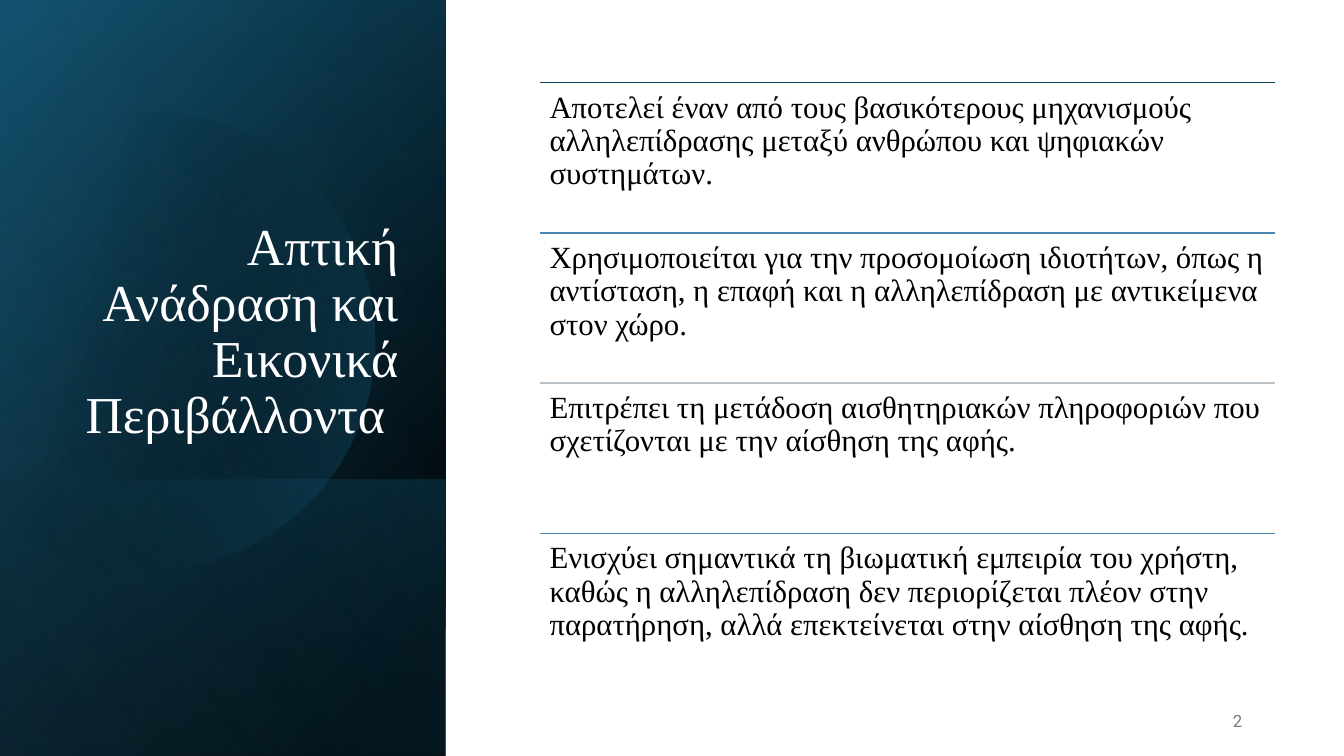
from dataclasses import dataclass

from lxml import etree
from pptx import Presentation
from pptx import util as u
from pptx.dml.color import RGBColor
from pptx.enum import shapes, text
from pptx.oxml.ns import qn

PX = 9144  # 100 px to the inch


@dataclass(frozen=True)
class Theme:
    serif: str = "Times New Roman"
    sans: str = "Roboto"
    black: str = "000000"
    white: str = "FFFFFF"
    deep: str = "104862"
    teal: str = "156082"
    sky: str = "46B1E1"
    grey: str = "797979"
    rules: tuple = ("104760", "4987AF", "BAC1C7", "4987AF")
    head: int = 37
    body: int = 22
    foot: int = 12


T = Theme()
TITLE = "Απτική Ανάδραση και Εικονικά Περιβάλλοντα "
POINTS = (
    "Αποτελεί έναν από τους βασικότερους μηχανισμούς αλληλεπίδρασης "
    "μεταξύ ανθρώπου και ψηφιακών συστημάτων.",
    "Χρησιμοποιείται για την προσομοίωση ιδιοτήτων, όπως η αντίσταση, "
    "η επαφή και η αλληλεπίδραση με αντικείμενα στον χώρο.",
    "Επιτρέπει τη μετάδοση αισθητηριακών πληροφοριών που σχετίζονται "
    "με την αίσθηση της αφής.",
    "Ενισχύει σημαντικά τη βιωματική εμπειρία του χρήστη, καθώς η "
    "αλληλεπίδραση δεν περιορίζεται πλέον στην παρατήρηση, αλλά "
    "επεκτείνεται στην αίσθηση της αφής.",
)


def emu(*sizes):
    return [round(s * PX) for s in sizes]


def shade(shape, angle, *stops):
    """Fill with a clockwise gradient of (position, colour, opacity) stops."""
    shape.shadow.inherit = False
    shape.line.fill.background()
    shape.fill.gradient()
    shape.fill.gradient_angle = 360 - angle
    for stop, (pos, color, _) in zip(shape.fill.gradient_stops, stops):
        stop.position = pos / 100
        stop.color.rgb = RGBColor.from_string(color)
    tints = shape.element.spPr.iter(qn("a:srgbClr"))
    for tint, (_, _, alpha) in zip(list(tints), stops):
        if alpha < 100:
            etree.SubElement(tint, qn("a:alpha"), val=str(alpha * 1000))


def layer(slide, box, angle, *stops):
    """Cover the box with a mirrored rectangle on its side."""
    x, y, w, h = box
    shift = (w - h) / 2
    rect = slide.shapes.add_shape(
        shapes.MSO_SHAPE.RECTANGLE, *emu(x + shift, y - shift, h, w))
    rect.rotation = 90
    rect.element.spPr.find(qn("a:xfrm")).set("flipH", "1")
    shade(rect, angle, *stops)


def curve(a, b, c, d, steps=16):
    """Points along a cubic curve, after its start."""
    for i in range(1, steps + 1):
        t = i / steps
        s = 1 - t
        yield tuple(s**3 * p + 3 * s * s * t * q + 3 * s * t * t * r + t**3 * v
                    for p, q, r, v in zip(a, b, c, d))


def disc(slide, x, y):
    """Draw the round glow, cut off on its left side."""
    arcs = (
        ((149, 110), (246, 112), (335, 177), (363, 275)),
        ((363, 275), (398, 397), (328, 523), (207, 558)),
        ((207, 558), (131, 580), (53, 561), (-3, 514)),
        ((0, 161), (23, 142), (50, 128), (80, 119)),
        ((80, 119), (103, 113), (126, 110), (149, 110)),
    )
    dots = [arcs[0][0]]
    for arc in arcs[:3]:
        dots += curve(*arc)
    dots += [(-15, 503), (-15, 175), (0, 161)]
    for arc in arcs[3:]:
        dots += curve(*arc)
    dots = [emu(x + dx, y + dy) for dx, dy in dots]
    form = slide.shapes.build_freeform(*dots[0], scale=1)
    form.add_line_segments(dots[1:], close=True)
    shade(form.convert_to_shape(), 14, (29, T.black, 0), (100, T.teal, 43))


def write(frame, words, font, size, color, align=None, space=None):
    frame.word_wrap = True
    para = frame.paragraphs[0]
    para.alignment = align
    para.line_spacing = space
    run = para.add_run()
    run.text = words
    run.font.name = font
    run.font.size = u.Pt(size)
    run.font.color.rgb = RGBColor.from_string(color)


def panel(slide, box):
    x, y, w, h = box
    layer(slide, box, 50, (8, T.black, 100), (100, T.deep, 100))
    layer(slide, box, 30, (0, T.black, 0), (99, T.teal, 46))
    layer(slide, (x, y + h - 274, w, 274), 130,
          (2, T.teal, 29), (100, T.black, 30))
    disc(slide, x, y)
    layer(slide, box, 120, (0, T.black, 0), (99, T.sky, 11))


def heading(slide, box):
    title = slide.shapes.title
    title.left, title.top, title.width, title.height = emu(*box)
    frame = title.text_frame
    frame.auto_size = text.MSO_AUTO_SIZE.NONE
    frame.vertical_anchor = text.MSO_ANCHOR.BOTTOM
    write(frame, TITLE, T.serif, T.head, T.white, text.PP_ALIGN.RIGHT, 0.9)
    tree = slide.shapes.element
    tree.remove(title.element)
    tree.append(title.element)  # above the panel


def rule(slide, x, y, w, color):
    line = slide.shapes.add_connector(
        shapes.MSO_CONNECTOR.STRAIGHT, *emu(x, y, x + w, y))
    line.line.color.rgb = RGBColor.from_string(color)
    line.line.width = u.Pt(1)
    etree.SubElement(line.element.spPr, qn("a:effectLst"))


def points(slide, box):
    x, y, w, h = box
    step = h / len(POINTS)
    for i, (words, color) in enumerate(zip(POINTS, T.rules)):
        top = y + i * step
        rule(slide, x, top, w, color)
        frame = slide.shapes.add_textbox(*emu(x, top, w, step)).text_frame
        frame.margin_left = frame.margin_right = 9 * PX
        frame.margin_top = frame.margin_bottom = 9 * PX
        write(frame, words, T.serif, T.body, T.black, space=0.9)


def number(slide, box):
    frame = slide.shapes.add_textbox(*emu(*box)).text_frame
    frame.vertical_anchor = text.MSO_ANCHOR.MIDDLE
    write(frame, "2", T.sans, T.foot, T.grey, text.PP_ALIGN.RIGHT)


def main():
    deck = Presentation()
    deck.slide_width, deck.slide_height = emu(1333, 750)
    slide = deck.slides.add_slide(deck.slide_layouts.get_by_name("Title Only"))
    panel(slide, (0, 0, 442, 750))
    heading(slide, (64, 184, 341, 262))
    points(slide, (536, 82, 729, 596))
    number(slide, (942, 695, 300, 40))
    deck.save("out.pptx")


if __name__ == "__main__":
    main()
